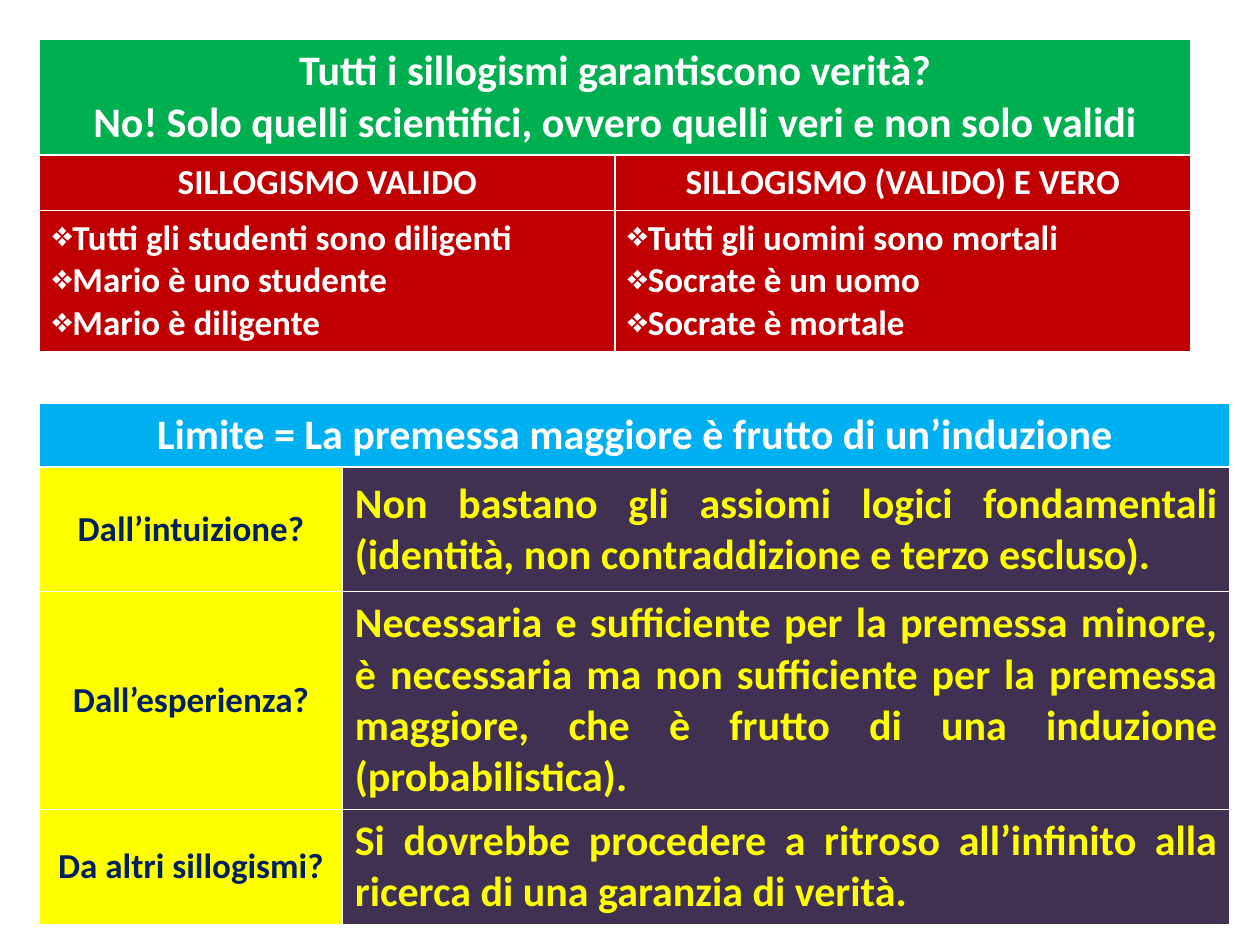
from pptx import Presentation
from pptx.dml.color import RGBColor
from pptx.enum.text import MSO_ANCHOR, PP_ALIGN
from pptx.oxml.ns import qn
from pptx.util import Cm, Pt
from lxml.etree import SubElement

WHITE, RED, YELLOW = "FFFFFF", "C00000", "FFFF00"
GREEN, BLUE, NAVY, PURPLE = "00B050", "00B0F0", "002060", "403152"
MID, JUST = PP_ALIGN.CENTER, PP_ALIGN.JUSTIFY


def color(code):
    return RGBColor.from_string(code)


class Deck:
    """Holds the text style and the current slide."""
    face = "Calibri"

    def __init__(self, slide):
        self.slide = slide

    def table(self, left, top, cols, rows):
        frame = self.slide.shapes.add_table(
            len(rows), len(cols), Cm(left), Cm(top), Cm(sum(cols)), Cm(sum(rows)))
        grid = frame.table
        for col, width in zip(grid.columns, cols):
            col.width = Cm(width)
        for row, height in zip(grid.rows, rows):
            row.height = Cm(height)
        return grid

    def cell(self, cell, lines, fill, ink=WHITE, size=20, align=MID,
             anchor=MSO_ANCHOR.TOP, mark=None):
        cell.fill.solid()
        cell.fill.fore_color.rgb = color(fill)
        cell.vertical_anchor = anchor
        cell.text = "\n".join(lines)
        for para in cell.text_frame.paragraphs:
            para.alignment = align
            font = para.font
            font.name, font.size, font.bold = self.face, Pt(size), True
            font.color.rgb = color(ink)
            if mark:
                self.bullet(para, mark)

    def bullet(self, para, mark):
        props = para._p.get_or_add_pPr()
        props.set("marL", "0")
        props.set("indent", "0")
        item = SubElement(props, qn("a:buChar"))
        item.set("char", mark)
        props.insert(0, item)

    def head(self, grid, lines, fill, anchor):
        first = grid.cell(0, 0)
        first.merge(grid.cell(0, 1))
        self.cell(first, lines, fill, size=24, anchor=anchor)


def main():
    prs = Presentation()
    prs.slide_width, prs.slide_height = Cm(25.4), Cm(19.05)
    deck = Deck(prs.slides.add_slide(prs.slide_layouts[6]))

    # Valid and true syllogisms
    kinds = [
        ("SILLOGISMO VALIDO",
         ["Tutti gli studenti sono diligenti", "Mario è uno studente",
          "Mario è diligente"]),
        ("SILLOGISMO (VALIDO) E VERO",
         ["Tutti gli uomini sono mortali", "Socrate è un uomo",
          "Socrate è mortale"]),
    ]
    grid = deck.table(0.8, 0.8, [11.6, 11.6], [2.31, 1.1, 2.84])
    deck.head(grid, ["Tutti i sillogismi garantiscono verità?",
                     "No! Solo quelli scientifici, ovvero quelli veri e non solo validi"],
              GREEN, MSO_ANCHOR.TOP)
    for col, (name, steps) in enumerate(kinds):
        deck.cell(grid.cell(1, col), [name], RED)
        deck.cell(grid.cell(2, col), steps, RED, align=JUST, mark="❖")

    # Limits of the major premise
    limits = [
        ("Dall’intuizione?",
         "Non bastano gli assiomi logici fondamentali "
         "(identità, non contraddizione e terzo escluso)."),
        ("Dall’esperienza?",
         "Necessaria e sufficiente per la premessa minore, è necessaria ma non "
         "sufficiente per la premessa maggiore, che è frutto di una induzione "
         "(probabilistica)."),
        ("Da altri sillogismi?",
         "Si dovrebbe procedere a ritroso all’infinito alla ricerca di una "
         "garanzia di verità."),
    ]
    grid = deck.table(0.8, 8.13, [6.1, 17.9], [1.27, 2.51, 4.38, 2.31])
    deck.head(grid, ["Limite = La premessa maggiore è frutto di un’induzione"],
              BLUE, MSO_ANCHOR.MIDDLE)
    for row, (source, reply) in enumerate(limits, 1):
        deck.cell(grid.cell(row, 0), [source], YELLOW, NAVY,
                  anchor=MSO_ANCHOR.MIDDLE)
        deck.cell(grid.cell(row, 1), [reply], PURPLE, YELLOW, 24, JUST,
                  MSO_ANCHOR.MIDDLE)

    prs.save("out.pptx")


if __name__ == "__main__":
    main()
